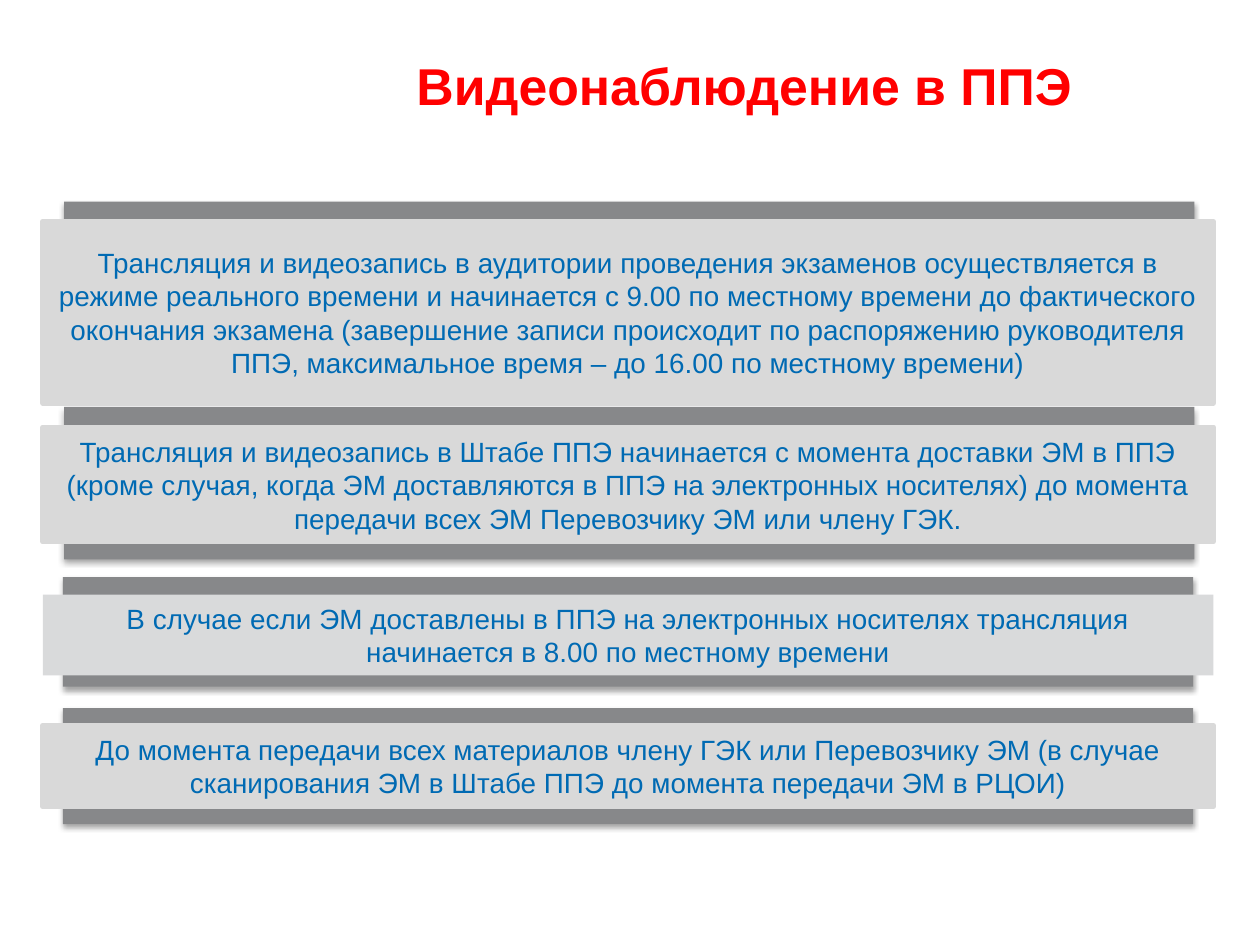
from dataclasses import dataclass

from lxml import etree
from pptx import Presentation
from pptx.dml.color import RGBColor
from pptx.enum.shapes import MSO_SHAPE
from pptx.enum.text import MSO_ANCHOR, PP_ALIGN
from pptx.oxml.ns import qn
from pptx.util import Inches, Pt

RECT = MSO_SHAPE.RECTANGLE
CENTER = PP_ALIGN.CENTER
MIDDLE = MSO_ANCHOR.MIDDLE


@dataclass(frozen=True)
class Theme:
    font: str = "Arial"
    title: str = "FF0000"
    body: str = "006AB3"
    band: str = "87888A"
    plate: str = "D9D9D9"
    plain_plate: str = "D9DADB"
    shadow: str = "000000"
    title_size: float = 29.6
    body_size: float = 15.9
    border: float = 3


THEME = Theme()

BAND_WIDTH = 8.97
PLATE_LEFT, PLATE_WIDTH = 0.34, 9.29

# Each rule: band (left, top, height), plate (top, height), bordered, wording
RULES = [
    ((0.51, 3.23, 1.21), (3.39, 0.91), True,
     "Трансляция и видеозапись в Штабе ППЭ начинается с момента доставки "
     "ЭМ в ППЭ (кроме случая, когда ЭМ доставляются в ППЭ на электронных "
     "носителях) до момента передачи всех ЭМ Перевозчику ЭМ или члену ГЭК."),
    ((0.5, 4.58, 0.87), (4.72, 0.64), False,
     "В случае если ЭМ доставлены в ППЭ на электронных носителях трансляция "
     "начинается в 8.00 по местному времени"),
    ((0.51, 1.6, 1.48), (1.76, 1.44), True,
     "Трансляция и видеозапись в аудитории проведения экзаменов "
     "осуществляется в режиме реального времени и начинается с 9.00 "
     "по местному времени до фактического окончания экзамена (завершение "
     "записи происходит по распоряжению руководителя ППЭ, максимальное "
     "время – до 16.00 по местному времени)"),
    ((0.5, 5.62, 0.92), (5.76, 0.64), True,
     "До момента передачи всех материалов члену ГЭК или Перевозчику ЭМ "
     "(в случае сканирования ЭМ в Штабе ППЭ до момента передачи "
     "ЭМ в РЦОИ)"),
]


def write_text(shape, text, *, size, color, bold=False, inset=(0.1, 0.05)):
    """Set centred wrapped text in a shape."""
    frame = shape.text_frame
    frame.word_wrap = True
    frame.vertical_anchor = MIDDLE
    frame.margin_left = frame.margin_right = Inches(inset[0])
    frame.margin_top = frame.margin_bottom = Inches(inset[1])
    paragraph = frame.paragraphs[0]
    paragraph.alignment = CENTER
    run = paragraph.add_run()
    run.text = text
    run.font.name = THEME.font
    run.font.size = Pt(size)
    run.font.bold = bold
    run.font.color.rgb = RGBColor.from_string(color)


def add_rect(slide, box, fill, border=None):
    rect = slide.shapes.add_shape(RECT, *map(Inches, box))
    rect.shadow.inherit = False
    rect.fill.solid()
    rect.fill.fore_color.rgb = RGBColor.from_string(fill)
    if border:
        rect.line.color.rgb = RGBColor.from_string(fill)
        rect.line.width = Pt(border)
    else:
        rect.line.fill.background()
    return rect


def drop_shadow(shape):
    """Add a soft shadow straight below the shape."""
    effects = shape._element.spPr.find(qn("a:effectLst"))
    outer = etree.SubElement(
        effects, qn("a:outerShdw"), blurRad=str(Pt(3.1)), dist=str(Pt(1.8)),
        dir="5400000", rotWithShape="0")
    color = etree.SubElement(outer, qn("a:srgbClr"), val=THEME.shadow)
    etree.SubElement(color, qn("a:alpha"), val="35000")


def add_title(slide, box, text):
    title = slide.shapes.add_textbox(*map(Inches, box))
    write_text(title, text, size=THEME.title_size, color=THEME.title,
               bold=True, inset=(0.19, 0.09))


def add_rule(slide, band_box, plate_box, bordered, text):
    """Draw a dark band with a wider light plate of text over it."""
    drop_shadow(add_rect(slide, band_box, THEME.band))
    if bordered:
        plate = add_rect(slide, plate_box, THEME.plate, THEME.border)
    else:
        plate = add_rect(slide, plate_box, THEME.plain_plate)
    write_text(plate, text, size=THEME.body_size, color=THEME.body)


def main():
    prs = Presentation()
    prs.slide_width, prs.slide_height = Inches(10), Inches(7.5)
    slide = prs.slides.add_slide(prs.slide_layouts[6])

    # Heading
    add_title(slide, (2.09, 0.2, 7.64, 0.94), "Видеонаблюдение в ППЭ")

    # Rules for broadcasting and recording
    for (left, top, height), (plate_top, plate_height), bordered, text in RULES:
        add_rule(slide, (left, top, BAND_WIDTH, height),
                 (PLATE_LEFT, plate_top, PLATE_WIDTH, plate_height),
                 bordered, text)

    prs.save("out.pptx")


if __name__ == "__main__":
    main()
